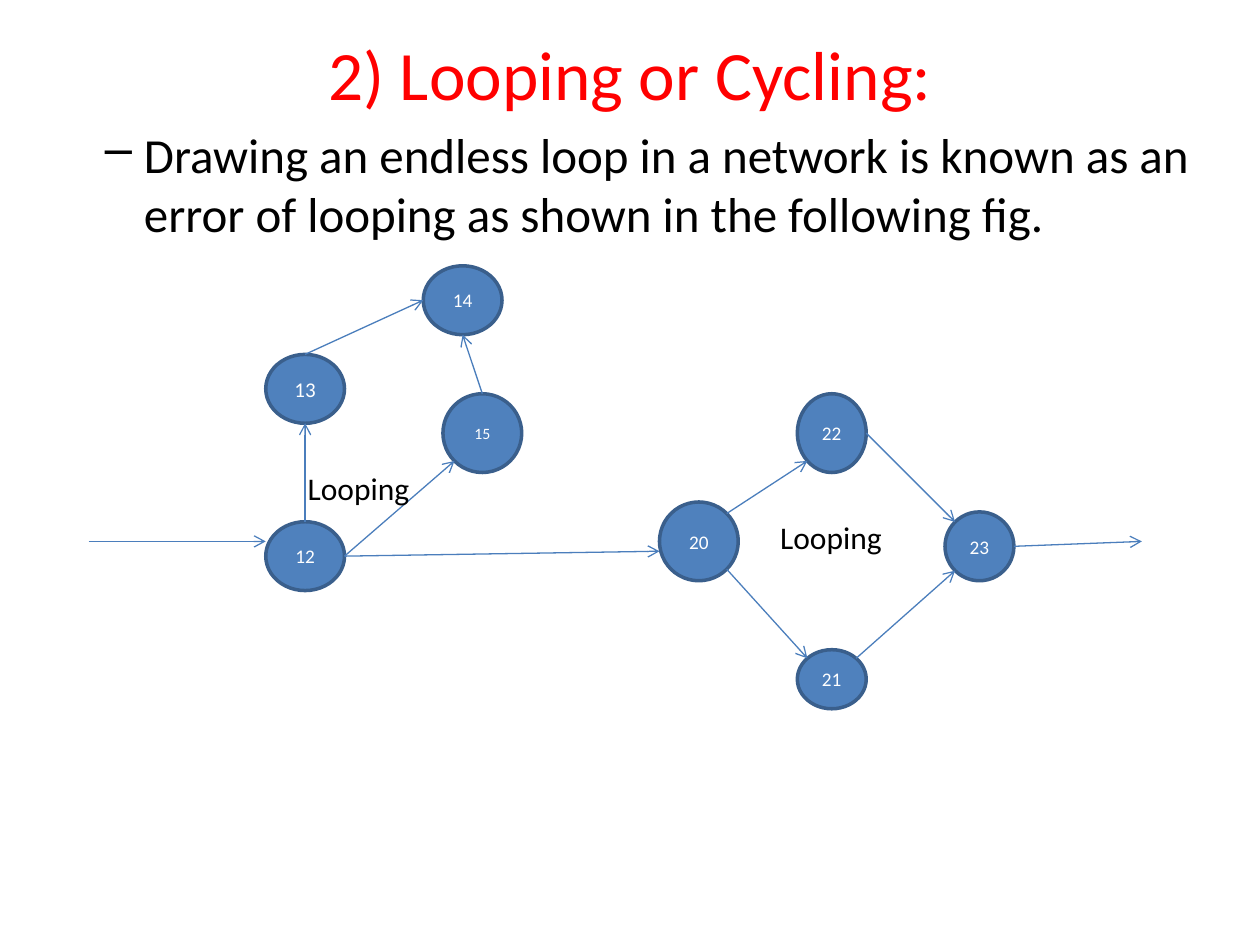
"""Build the slide on looping errors in a network diagram."""
import dataclasses
import math

import lxml.etree
import pptx
import pptx.dml.color
import pptx.enum.shapes
import pptx.enum.text
import pptx.oxml.ns
import pptx.util

RGB = pptx.dml.color.RGBColor
RED = RGB(0xFF, 0x00, 0x00)
BLACK = RGB(0x00, 0x00, 0x00)
WHITE = RGB(0xFF, 0xFF, 0xFF)
NODE_FILL = RGB(0x4F, 0x81, 0xBD)
NODE_EDGE = RGB(0x3A, 0x5F, 0x8C)
ARROW = RGB(0x4B, 0x7E, 0xBC)

COLUMNS, ROWS = 128, 96
WIDTH, HEIGHT = pptx.util.Inches(10), pptx.util.Inches(7.5)
CENTER = pptx.enum.text.PP_ALIGN.CENTER
MIDDLE = pptx.enum.text.MSO_ANCHOR.MIDDLE
ANGLES = {"right": 0, "bottom right": 45, "bottom": 90, "left": 180,
          "top left": 225, "top": 270, "top right": 315, "bottom left": 135}


@dataclasses.dataclass(frozen=True)
class Area:
    """A rectangle in grid columns and rows."""
    column: float
    row: float
    columns: float
    rows: float

    def box(self) -> tuple[int, int, int, int]:
        """Return left, top, width and height as lengths."""
        return (*place((self.column, self.row)), *place((self.columns, self.rows)))


@dataclasses.dataclass(frozen=True)
class Node:
    """A numbered event of the network."""
    area: Area
    size: float = 11

    def site(self, side: str) -> tuple[float, float]:
        """Return the grid point on the ellipse at a named side."""
        angle = math.radians(ANGLES[side])
        return (self.area.column + self.area.columns * (1 + math.cos(angle)) / 2,
                self.area.row + self.area.rows * (1 + math.sin(angle)) / 2)


@dataclasses.dataclass(frozen=True)
class Label:
    """A text box with its format."""
    text: str
    area: Area
    font: dict
    frame: dict
    para: dict = dataclasses.field(default_factory=dict)
    bullet: str = ""


NODES = {
    "12": Node(Area(27, 53, 8, 7)),
    "13": Node(Area(27, 36, 8, 7), 12),
    "15": Node(Area(45, 40, 8, 8), 9),
    "14": Node(Area(43, 27, 8, 7)),
    "20": Node(Area(67, 51, 8, 8)),
    "22": Node(Area(81, 40, 7, 8)),
    "21": Node(Area(81, 66, 7, 6)),
    "23": Node(Area(96, 52, 7, 7)),
}
LINKS = [
    ((9, 55), (27, 55)),
    (("12", "right"), ("15", "bottom left")),
    (("12", "top"), ("13", "bottom")),
    (("13", "top"), ("14", "left")),
    (("15", "top"), ("14", "bottom")),
    (("12", "right"), (67, 56)),
    (("20", "top right"), ("22", "bottom left")),
    (("20", "bottom right"), ("21", "top left")),
    (("22", "right"), ("23", "top left")),
    (("21", "top right"), ("23", "bottom left")),
    (("23", "right"), (116, 55)),
]
LOOPING = {"size": pptx.util.Pt(18), "color": BLACK}
LABELS = [
    Label("2) Looping or Cycling:", Area(6.4, 3.84, 115.2, 7.2),
          {"size": pptx.util.Pt(39.6), "color": RED},
          {"word_wrap": True, "vertical_anchor": MIDDLE}, {"alignment": CENTER}),
    Label("Drawing an endless loop in a network is known as an error of "
          "looping as shown in the following fig.", Area(3, 12, 122, 80),
          {"size": pptx.util.Pt(28), "color": BLACK}, {"word_wrap": True}, bullet="–"),
    Label("Looping", Area(78, 52, 13, 5.12), LOOPING, {"word_wrap": False}),
    Label("Looping", Area(30, 47, 13, 5.12), LOOPING, {"word_wrap": False}),
]


def place(point: tuple[float, float]) -> tuple[int, int]:
    """Turn a grid point into lengths."""
    return round(point[0] * WIDTH / COLUMNS), round(point[1] * HEIGHT / ROWS)


def apply(target, values: dict) -> None:
    """Set each attribute named in a dict."""
    for name, value in values.items():
        setattr(target, name, value)


def add_child(parent, tag: str, **attributes: str):
    """Append a drawing element."""
    return lxml.etree.SubElement(parent, pptx.oxml.ns.qn(tag), attributes)


def write(shape, text: str, font: dict, frame: dict, para_format: dict, bullet: str = "") -> None:
    """Put one formatted paragraph in a shape."""
    apply(shape.text_frame, frame)
    para = shape.text_frame.paragraphs[0]
    apply(para, para_format)
    if bullet:
        properties = para._p.get_or_add_pPr()
        properties.set("marL", str(pptx.util.Inches(0.81)))
        properties.set("indent", str(pptx.util.Inches(-0.31)))
        add_child(properties, "a:buChar", char=bullet)
    span = para.add_run()
    span.text = text
    apply(span.font, {"name": "Calibri", "size": font["size"]})
    span.font.color.rgb = font["color"]


def draw_node(page, number: str, node: Node) -> None:
    """Draw a numbered ellipse."""
    shape = page.shapes.add_shape(pptx.enum.shapes.MSO_SHAPE.OVAL, *node.area.box())
    shape.shadow.inherit = False
    shape.fill.solid()
    shape.fill.fore_color.rgb = NODE_FILL
    shape.line.color.rgb = NODE_EDGE
    shape.line.width = pptx.util.Pt(2)
    write(shape, number, {"size": pptx.util.Pt(node.size), "color": WHITE},
          {"word_wrap": True, "vertical_anchor": MIDDLE}, {"alignment": CENTER})


def locate(end: tuple) -> tuple[float, float]:
    """Resolve a link end to a grid point."""
    return NODES[end[0]].site(end[1]) if end[0] in NODES else end


def draw_link(page, start: tuple, end: tuple) -> None:
    """Draw an arrow between two link ends."""
    link = page.shapes.add_connector(pptx.enum.shapes.MSO_CONNECTOR.STRAIGHT,
                                     *place(locate(start)), *place(locate(end)))
    link.line.color.rgb = ARROW
    link.line.width = pptx.util.Pt(0.75)
    add_child(link.line._get_or_add_ln(), "a:tailEnd", type="arrow")
    add_child(link._element.spPr, "a:effectLst")


def draw_label(page, label: Label) -> None:
    """Draw a text box."""
    box = page.shapes.add_textbox(*label.area.box())
    write(box, label.text, label.font, label.frame, label.para, label.bullet)


def main() -> None:
    """Build and save the deck."""
    deck = pptx.Presentation()
    apply(deck, {"slide_width": WIDTH, "slide_height": HEIGHT})
    page = deck.slides.add_slide(deck.slide_layouts[6])
    for number, node in NODES.items():
        draw_node(page, number, node)
    for start, end in LINKS:
        draw_link(page, start, end)
    for label in LABELS:
        draw_label(page, label)
    deck.save("out.pptx")


if __name__ == "__main__":
    main()
